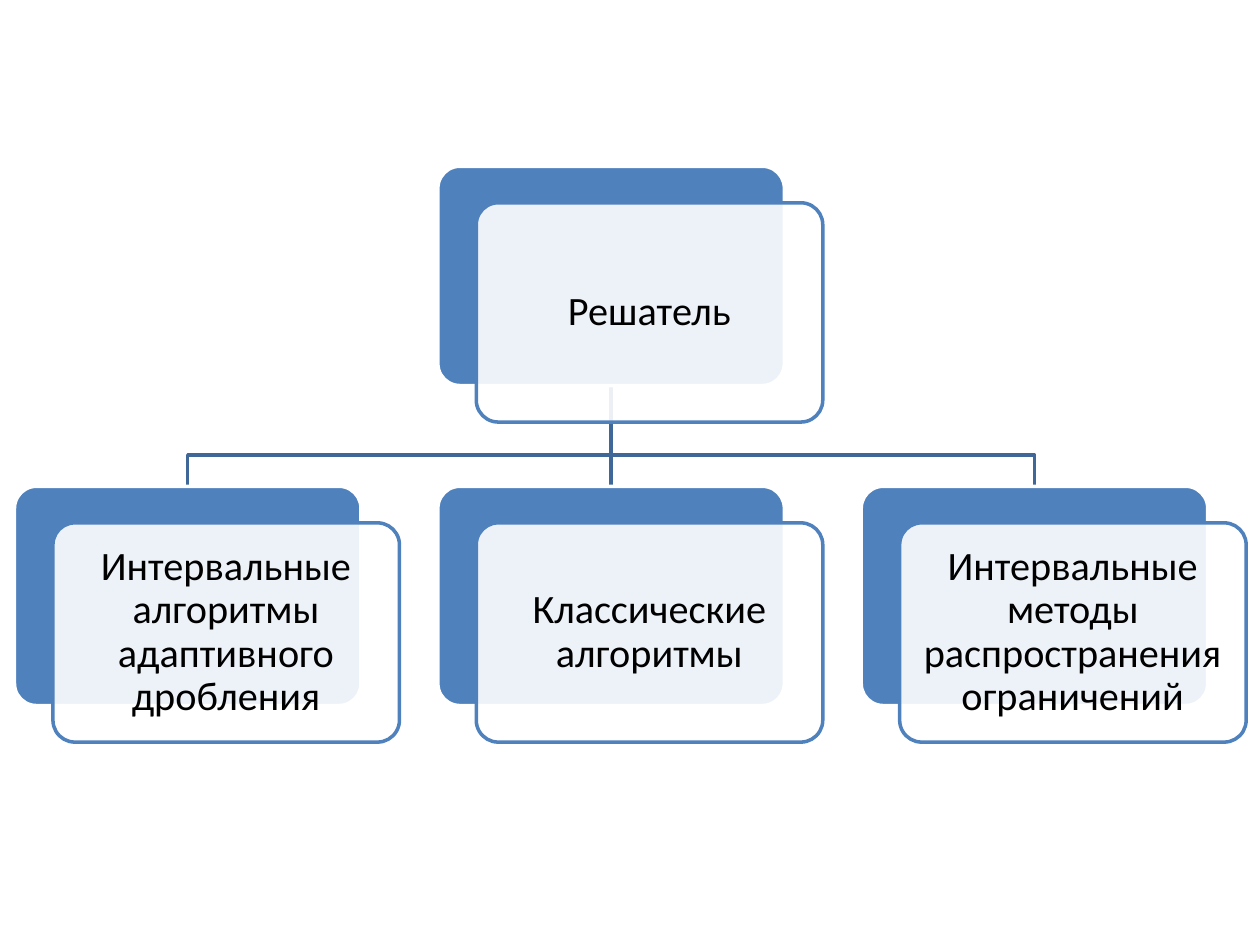
from lxml import etree
from pptx import Presentation
from pptx.dml.color import RGBColor
from pptx.enum.shapes import MSO_CONNECTOR as Connector, MSO_SHAPE as Shape
from pptx.enum.text import MSO_ANCHOR as Anchor, PP_ALIGN as Align
from pptx.oxml.ns import qn
from pptx.util import Inches, Pt

BLUE = RGBColor(0x4F, 0x81, 0xBD)
LINK_BLUE = RGBColor(0x3F, 0x67, 0x97)
WHITE = RGBColor(0xFF, 0xFF, 0xFF)
BLACK = RGBColor(0x00, 0x00, 0x00)

# Chart grid, in inches
BOX_WIDTH, BOX_HEIGHT = 2.75, 1.74
CARD_SHIFT_X, CARD_SHIFT_Y = 0.305, 0.29
ROOT_TOP, CHILD_TOP = 1.32, 3.86
BUS_Y = 3.61
FIRST_LEFT, COLUMN_STEP = 0.115, 3.36

ROOT = "Решатель"
CHILDREN = [
    "Интервальные алгоритмы адаптивного дробления",
    "Классические алгоритмы",
    "Интервальные методы распространения ограничений",
]


def set_line(shape, color):
    shape.line.color.rgb = color
    shape.line.width = Pt(2)


def add_box(slide, left, top, fill, line):
    box = slide.shapes.add_shape(Shape.ROUNDED_RECTANGLE, Inches(left), Inches(top),
                                 Inches(BOX_WIDTH), Inches(BOX_HEIGHT))
    box.adjustments[0] = 0.1
    box.shadow.inherit = False
    box.fill.solid()
    box.fill.fore_color.rgb = fill
    set_line(box, line)
    return box


def add_node(slide, left, top, text):
    """Blue box with a translucent text card over it; returns the blue box."""
    back = add_box(slide, left, top, BLUE, WHITE)
    card = add_box(slide, left + CARD_SHIFT_X, top + CARD_SHIFT_Y, WHITE, BLUE)
    card_color = card.fill._xPr.find(qn("a:solidFill"))[0]
    etree.SubElement(card_color, qn("a:alpha"), val="90000")

    frame = card.text_frame
    frame.word_wrap = True
    frame.vertical_anchor = Anchor.MIDDLE
    frame.margin_left = frame.margin_right = Inches(0.05)
    frame.margin_top = frame.margin_bottom = Inches(0.05)
    paragraph = frame.paragraphs[0]
    paragraph.text = text
    paragraph.alignment = Align.CENTER
    paragraph.line_spacing = 0.9
    paragraph.font.name = "Calibri"
    paragraph.font.size = Pt(23)
    paragraph.font.color.rgb = BLACK
    return back


def add_elbow(slide, start_x, end_x):
    """Stepped line from the bottom of the root to the top of a side child."""
    points = [(start_x, BUS_Y), (end_x, BUS_Y), (end_x, CHILD_TOP)]
    builder = slide.shapes.build_freeform(Inches(start_x), Inches(ROOT_TOP + BOX_HEIGHT))
    builder.add_line_segments([(Inches(x), Inches(y)) for x, y in points], close=False)
    elbow = builder.convert_to_shape()
    elbow.shadow.inherit = False
    elbow.fill.background()
    set_line(elbow, LINK_BLUE)


def add_hierarchy(slide, left, root_top, child_top):
    lefts = [left + i * COLUMN_STEP for i in range(len(CHILDREN))]
    centers = [x + BOX_WIDTH / 2 for x in lefts]

    # Links go first so that the cards cover them
    for side in (centers[2], centers[0]):
        add_elbow(slide, centers[1], side)
    trunk = slide.shapes.add_connector(
        Connector.STRAIGHT, Inches(centers[1]), Inches(root_top + BOX_HEIGHT),
        Inches(centers[1]), Inches(child_top))
    set_line(trunk, LINK_BLUE)
    etree.SubElement(trunk._element.spPr, qn("a:effectLst"))

    # Nodes
    root = add_node(slide, lefts[1], root_top, ROOT)
    children = [add_node(slide, x, child_top, text) for x, text in zip(lefts, CHILDREN)]
    trunk.begin_connect(root, 2)
    trunk.end_connect(children[1], 0)


def main():
    presentation = Presentation()
    presentation.slide_width = Inches(10)
    presentation.slide_height = Inches(7.5)
    slide = presentation.slides.add_slide(presentation.slide_layouts[6])
    add_hierarchy(slide, FIRST_LEFT, ROOT_TOP, CHILD_TOP)
    presentation.save("out.pptx")


if __name__ == "__main__":
    main()
